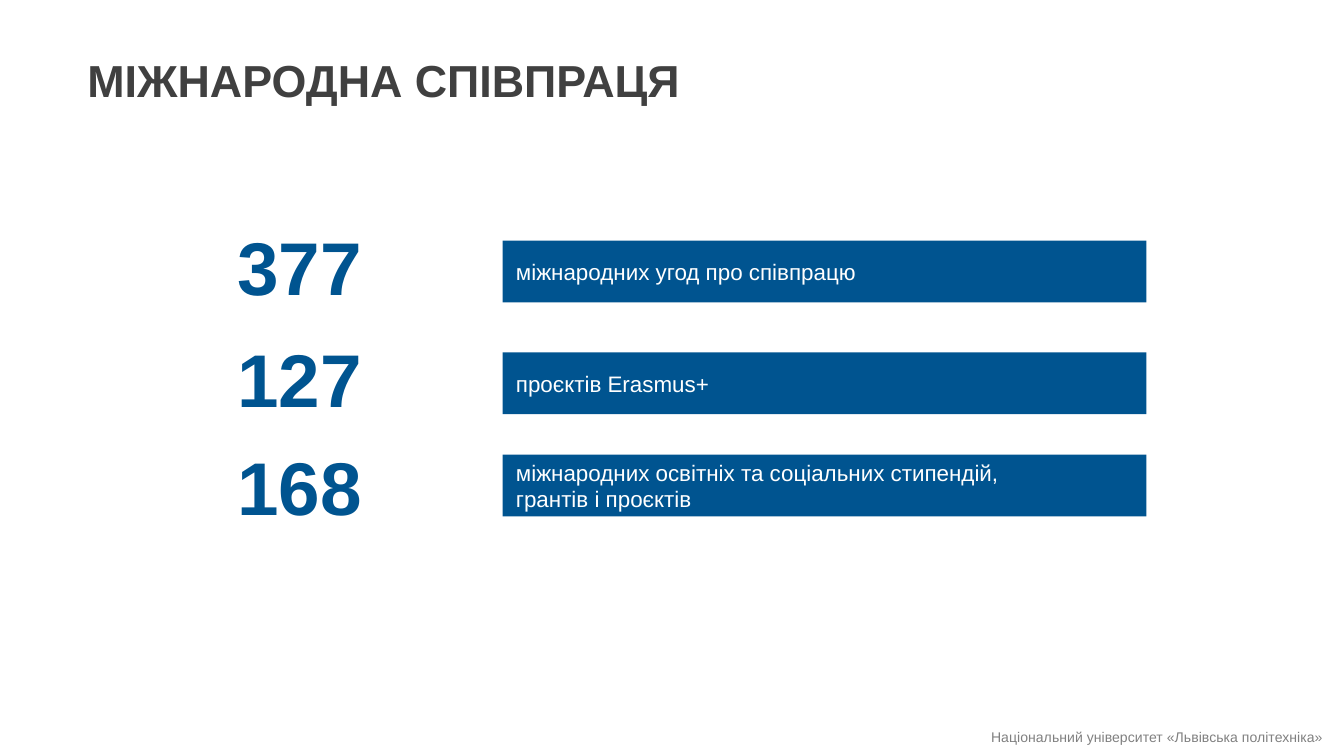
from dataclasses import dataclass
from typing import Any

from pptx import Presentation
from pptx.dml.color import RGBColor
from pptx.enum.shapes import MSO_SHAPE
from pptx.enum.text import MSO_ANCHOR, MSO_AUTO_SIZE, PP_ALIGN
from pptx.util import Pt


@dataclass(frozen=True)
class Theme:
    font: str = "Arial"
    blue: RGBColor = RGBColor(0x00, 0x54, 0x90)
    dark: RGBColor = RGBColor(0x40, 0x40, 0x40)
    gray: RGBColor = RGBColor(0x80, 0x80, 0x80)
    white: RGBColor = RGBColor(0xFF, 0xFF, 0xFF)
    title_size: float = 24
    number_size: float = 40
    label_size: float = 12
    footer_size: float = 13


@dataclass(frozen=True)
class Indicator:
    number: str
    label: list[str]
    top: float
    number_height: float = 46
    line_spacing: float = 0.9


THEME = Theme()
BAR_LEFT, BAR_WIDTH, BAR_HEIGHT = 269.3, 344.9, 33.1
NUMBER_LEFT, NUMBER_WIDTH = 72.7, 175.7
TIGHT = (2.9, 1.4)
ROOMY = (7.2, 3.6)

INDICATORS = [
    Indicator("377", ["міжнародних угод про співпрацю"], 128.9),
    Indicator("127", ["проєктів Erasmus+"], 188.8),
    Indicator(
        "168",
        ["міжнародних освітніх та соціальних стипендій,", "грантів і проєктів"],
        243.6,
        number_height=51,
        line_spacing=1.0,
    ),
]


def set_all(target: Any, values: dict[str, Any]) -> None:
    for name, value in values.items():
        setattr(target, name, value)


def place(shape: Any, left: float, top: float, width: float, height: float) -> None:
    set_all(shape, {"left": Pt(left), "top": Pt(top), "width": Pt(width), "height": Pt(height)})


def write(
    shape: Any,
    lines: list[str],
    size: float,
    color: RGBColor,
    bold: bool = False,
    align: PP_ALIGN = PP_ALIGN.LEFT,
    anchor: MSO_ANCHOR = MSO_ANCHOR.TOP,
    insets: tuple[float, float] = TIGHT,
    spacing: float = 1.0,
    wrap: bool = True,
    fit: MSO_AUTO_SIZE = MSO_AUTO_SIZE.SHAPE_TO_FIT_TEXT,
) -> None:
    """Fill a shape with one paragraph per line; insets are (side, top and bottom)."""
    side, edge = insets
    frame = shape.text_frame
    frame.text = "\n".join(lines)
    set_all(frame, {
        "margin_left": Pt(side), "margin_right": Pt(side),
        "margin_top": Pt(edge), "margin_bottom": Pt(edge),
        "vertical_anchor": anchor, "word_wrap": wrap, "auto_size": fit,
    })
    for para in frame.paragraphs:
        set_all(para, {"alignment": align, "line_spacing": spacing})
        for span in para.runs:
            set_all(span.font, {"name": THEME.font, "size": Pt(size), "bold": bold})
            span.font.color.rgb = color


def add_text_box(page: Any, left: float, top: float, width: float, height: float) -> Any:
    return page.shapes.add_textbox(Pt(left), Pt(top), Pt(width), Pt(height))


def draw_indicator(page: Any, item: Indicator) -> None:
    """Draw a label bar with its number centred on the same line."""
    bar = page.shapes.add_shape(
        MSO_SHAPE.RECTANGLE, Pt(BAR_LEFT), Pt(item.top), Pt(BAR_WIDTH), Pt(BAR_HEIGHT)
    )
    bar.shadow.inherit = False
    bar.fill.solid()
    bar.fill.fore_color.rgb = THEME.blue
    bar.line.fill.background()
    write(bar, item.label, THEME.label_size, THEME.white, anchor=MSO_ANCHOR.MIDDLE,
          insets=ROOMY, fit=MSO_AUTO_SIZE.NONE)

    number_top = item.top + (BAR_HEIGHT - item.number_height) / 2
    box = add_text_box(page, NUMBER_LEFT, number_top, NUMBER_WIDTH, item.number_height)
    write(box, [item.number], THEME.number_size, THEME.blue, bold=True,
          align=PP_ALIGN.CENTER, anchor=MSO_ANCHOR.MIDDLE, spacing=item.line_spacing)


def draw_footer(page: Any) -> None:
    box = add_text_box(page, 467.3, 387.4, 244.1, 13.7)
    write(box, ["Національний університет «Львівська політехніка»"],
          THEME.footer_size, THEME.gray, align=PP_ALIGN.RIGHT)
    span = box.text_frame.paragraphs[0].runs[0]
    span._r.get_or_add_rPr().set("baseline", "30000")


def main() -> None:
    deck = Presentation()
    set_all(deck, {"slide_width": Pt(720), "slide_height": Pt(405)})
    page = deck.slides.add_slide(deck.slide_layouts[5])

    title = page.shapes.title
    place(title, 43.9, 26.6, 326.2, 31.7)
    write(title, ["МІЖНАРОДНА СПІВПРАЦЯ"], THEME.title_size, THEME.dark, bold=True, wrap=False)
    for item in INDICATORS:
        draw_indicator(page, item)
    draw_footer(page)
    deck.save("out.pptx")


if __name__ == "__main__":
    main()
